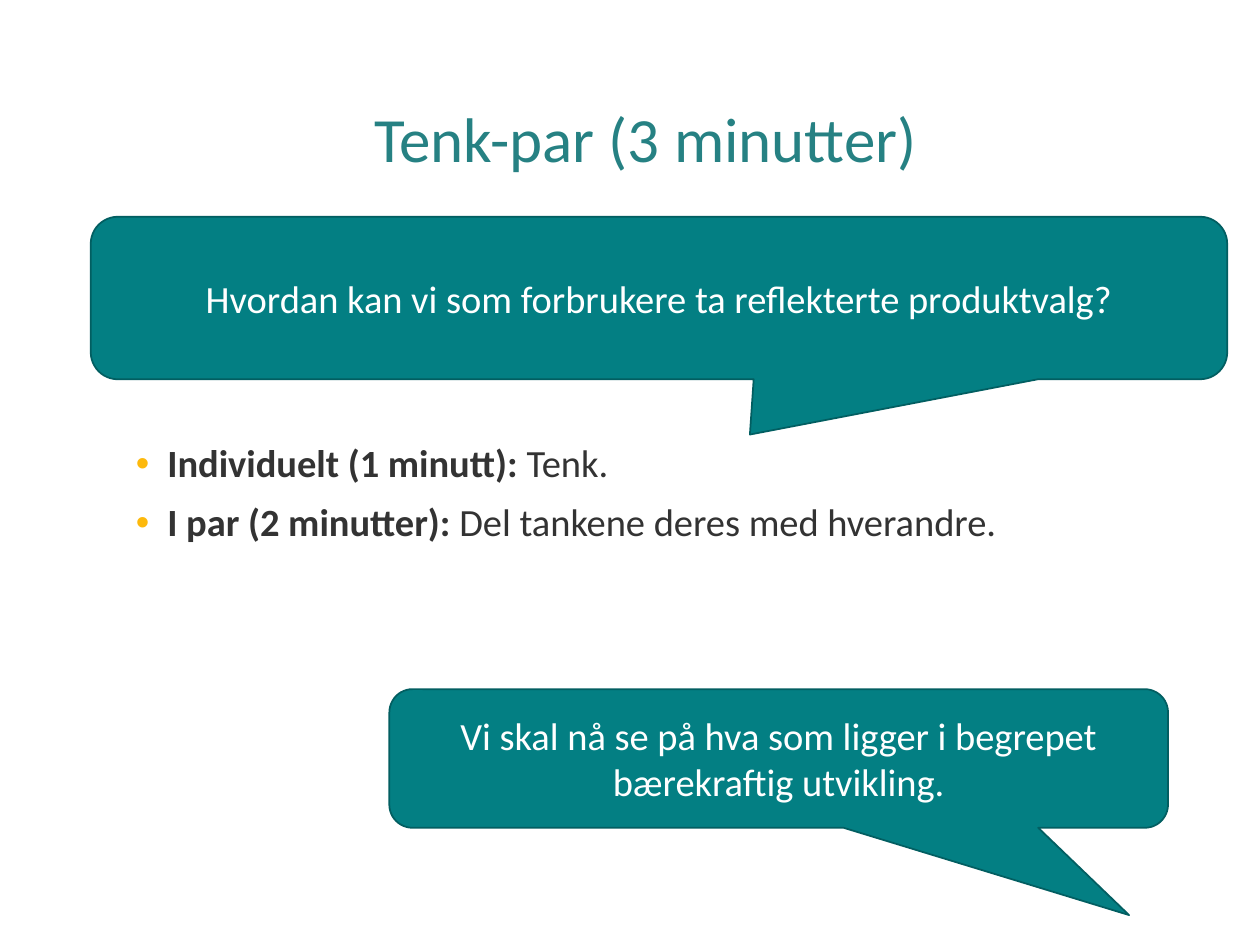
from dataclasses import dataclass

from lxml.etree import SubElement
from pptx import Presentation
from pptx.dml.color import RGBColor as Rgb
from pptx.enum.shapes import MSO_SHAPE as Shape
from pptx.enum.text import MSO_ANCHOR as Anchor, PP_ALIGN as Align
from pptx.oxml.ns import qn
from pptx.slide import Slide
from pptx.text.text import Font
from pptx.util import Inches, Pt


@dataclass(frozen=True)
class Theme:
    face: str = "Calibri"
    head: str = "268183"
    ink: str = "333333"
    fill: str = "037F83"
    edge: str = "025E61"
    light: str = "FFFFFF"
    dot: str = "FDB90C"
    big: int = 36
    body: int = 22


@dataclass(frozen=True)
class Box:
    left: float
    top: float
    width: float
    height: float

    def dims(self) -> tuple:
        return tuple(map(Inches, (self.left, self.top, self.width, self.height)))


@dataclass(frozen=True)
class Bubble:
    box: Box
    tip: tuple[float, float]
    text: str


@dataclass(frozen=True)
class Step:
    label: str
    task: str


THEME = Theme()
TITLE = "Tenk-par (3 minutter)"
HEAD = Box(0.98, 0.4, 8.29, 1.45)
LIST = Box(0.98, 3.48, 8.29, 2.34)
STEPS = (
    Step("Individuelt (1 minutt): ", "Tenk."),
    Step("I par (2 minutter): ", "Del tankene deres med hverandre."),
)
BUBBLES = (
    Bubble(Box(0.72, 1.72, 9.02, 1.29), (0.08, 0.84),
           "Hvordan kan vi som forbrukere ta reflekterte produktvalg?"),
    Bubble(Box(3.09, 5.47, 6.18, 1.1), (0.45, 1.13),
           "Vi skal nå se på hva som ligger i begrepet bærekraftig utvikling."),
)


def style(font: Font, size: int, color: str, bold: bool = False) -> None:
    """Set face, size, colour and weight."""
    font.name, font.size, font.bold = THEME.face, Pt(size), bold
    font.color.rgb = Rgb.from_string(color)


def add_title(slide: Slide) -> None:
    """Place and format the title."""
    title = slide.shapes.title
    title.left, title.top, title.width, title.height = HEAD.dims()
    frame = title.text_frame
    frame.text = TITLE
    frame.vertical_anchor = Anchor.MIDDLE
    para = frame.paragraphs[0]
    para.alignment, para.line_spacing = Align.CENTER, 0.9
    style(para.runs[0].font, THEME.big, THEME.head)


def add_steps(slide: Slide) -> None:
    """Draw the bulleted list of steps."""
    frame = slide.shapes.add_textbox(*LIST.dims()).text_frame
    frame.word_wrap = True
    for i, step in enumerate(STEPS):
        para = frame.add_paragraph() if i else frame.paragraphs[0]
        props = para._p.get_or_add_pPr()
        props.set("marL", str(Inches(0.25)))
        props.set("indent", str(-Inches(0.25)))
        tint = SubElement(props, qn("a:buClr"))
        SubElement(tint, qn("a:srgbClr"), val=THEME.dot)
        SubElement(props, qn("a:buFont"), typeface="Arial")
        SubElement(props, qn("a:buChar"), char="•")
        para.line_spacing = 0.9
        para.space_before = Pt(10 if i else 0)
        for text, bold in ((step.label, True), (step.task, False)):
            run = para.add_run()
            run.text = text
            style(run.font, THEME.body, THEME.ink, bold)


def add_bubble(slide: Slide, bubble: Bubble) -> None:
    """Draw one speech bubble with centred text."""
    shape = slide.shapes.add_shape(Shape.ROUNDED_RECTANGULAR_CALLOUT, *bubble.box.dims())
    shape.shadow.inherit = False
    for i, value in enumerate((*bubble.tip, 0.167)):
        shape.adjustments[i] = value
    shape.fill.solid()
    shape.fill.fore_color.rgb = Rgb.from_string(THEME.fill)
    shape.line.color.rgb = Rgb.from_string(THEME.edge)
    shape.line.width = Pt(1)
    frame = shape.text_frame
    frame.text = bubble.text
    frame.word_wrap = True
    frame.vertical_anchor = Anchor.MIDDLE
    para = frame.paragraphs[0]
    para.alignment = Align.CENTER
    style(para.runs[0].font, THEME.body, THEME.light)


def main() -> None:
    """Build and save the slide."""
    deck = Presentation()
    deck.slide_width, deck.slide_height = Inches(10), Inches(7.5)
    slide = deck.slides.add_slide(deck.slide_layouts[5])
    add_title(slide)
    add_steps(slide)
    for bubble in BUBBLES:
        add_bubble(slide, bubble)
    deck.save("out.pptx")


if __name__ == "__main__":
    main()
